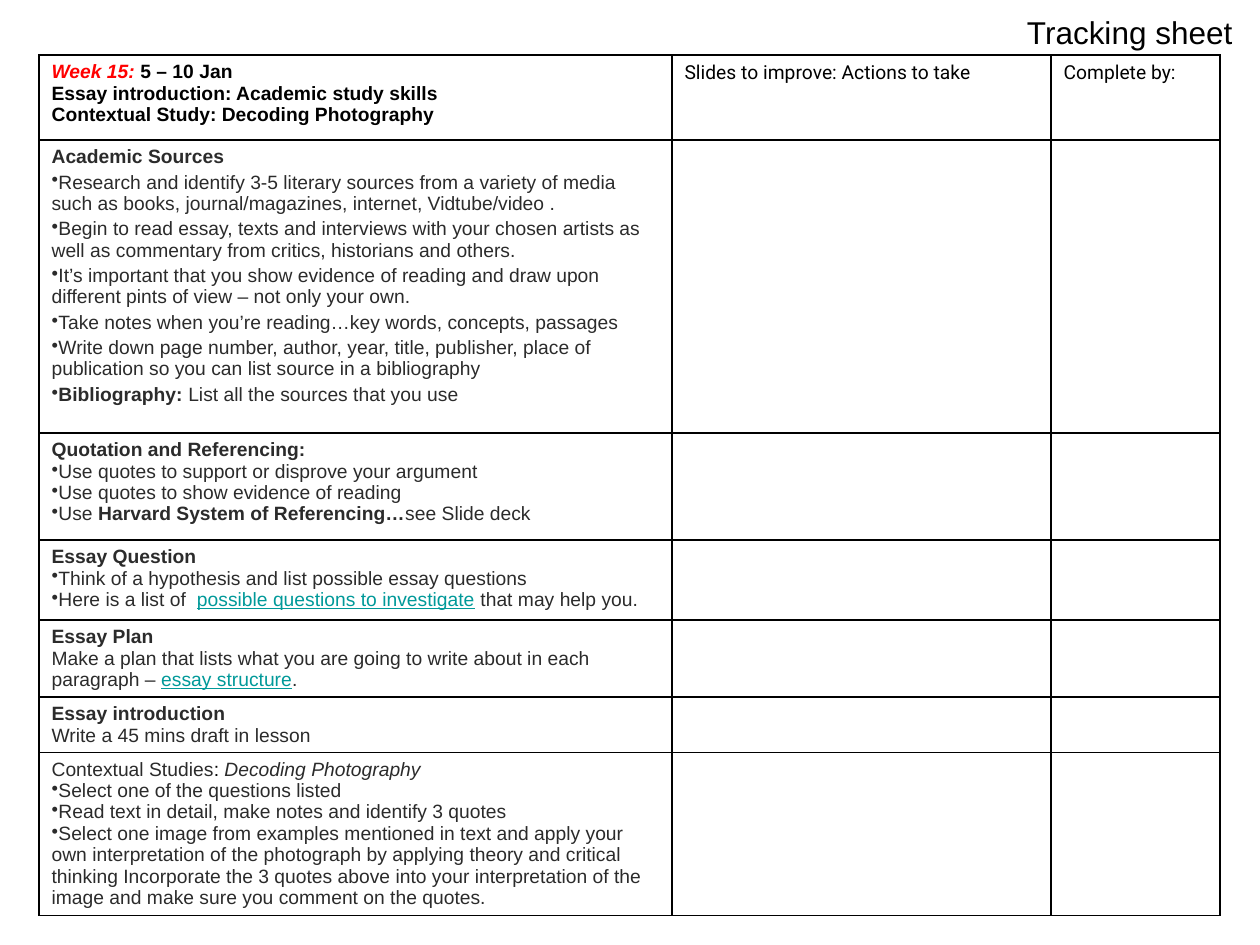
from lxml import etree
from pptx import Presentation
from pptx.dml import color
from pptx.enum import text
from pptx.oxml import ns
from pptx.util import Pt

EMU_PER_PX = 914400 / 126
BLACK, GREY, RED, TEAL = "000000", "2B2B2B", "FF0000", "009999"

COLUMNS = [633, 379, 169]
ROW_HEIGHTS = [85, 293, 107, 80, 77, 55, 163]

PLAIN, BOLD = {}, {"bold": True}
LINK = {"color": TEAL, "underline": True}
HEADING = {"color": BLACK, "bold": True}
LABEL = {"color": BLACK, "font": "Roboto"}


def px(value):
    return round(value * EMU_PER_PX)


def rgb(value):
    return color.RGBColor.from_string(value)


def line(*runs, bullet=False, before=0):
    return runs, bullet, before


def bullet(*runs, before=0):
    return line(*runs, bullet=True, before=before)


SPACED = 2.2
HEADER = [
    [line(("Week 15: ", {"color": RED, "bold": True, "italic": True}),
          ("5 – 10 Jan", HEADING)),
     line(("Essay introduction: Academic study skills", HEADING)),
     line(("Contextual Study: Decoding Photography", HEADING))],
    [line(("Slides to improve: Actions to take", LABEL))],
    [line(("Complete by:", LABEL))],
]
SOURCES = [
    "Research and identify 3-5 literary sources from a variety of media such as "
    "books, journal/magazines, internet, Vidtube/video .",
    "Begin to read essay, texts and interviews with your chosen artists as well as "
    "commentary from critics, historians and others.",
    "It’s important that you show evidence of reading and draw upon different pints "
    "of view – not only your own.",
    "Take notes when you’re reading…key words, concepts, passages",
    "Write down page number, author, year, title, publisher, place of publication "
    "so you can list source in a bibliography",
]
TASKS = [
    [line(("Academic Sources", BOLD), before=SPACED)]
    + [bullet((source, PLAIN), before=SPACED) for source in SOURCES]
    + [bullet(("Bibliography:", BOLD), (" List all the sources that you use", PLAIN),
              before=SPACED)],
    [line(("Quotation and Referencing:", BOLD)),
     bullet(("Use quotes to support or disprove your argument", PLAIN)),
     bullet(("Use quotes to show evidence of reading", PLAIN)),
     bullet(("Use ", PLAIN), ("Harvard System of Referencing…", BOLD),
            ("see Slide deck", PLAIN))],
    [line(("Essay Question", BOLD)),
     bullet(("Think of a hypothesis and list possible essay questions", PLAIN)),
     bullet(("Here is a list of  ", PLAIN), ("possible questions to investigate", LINK),
            (" that may help you.", PLAIN))],
    [line(("Essay Plan", BOLD)),
     line(("Make a plan that lists what you are going to write about in each "
           "paragraph – ", PLAIN), ("essay structure", LINK), (".", PLAIN))],
    [line(("Essay introduction", BOLD)),
     line(("Write a 45 mins draft in lesson", PLAIN))],
    [line(("Contextual Studies", PLAIN), (": ", {"color": BLACK}),
          ("Decoding Photography", {"italic": True})),
     bullet(("Select one of the questions listed", PLAIN)),
     bullet(("Read text in detail, make notes and identify 3 quotes", PLAIN)),
     bullet(("Select one image from examples mentioned in text and apply your own "
             "interpretation of the photograph by applying theory and critical thinking "
             "Incorporate the 3 quotes above into your interpretation of the image and "
             "make sure you comment on the quotes.", PLAIN))],
]


class SheetBuilder:
    def __init__(self, slide, font="Arial", size=11):
        self.slide = slide
        self.font = font
        self.size = size

    def run(self, paragraph, wording, style, size=None):
        run = paragraph.add_run()
        run.text = wording
        run.font.name = style.get("font", self.font)
        run.font.size = Pt(size or self.size)
        run.font.bold = style.get("bold", False)
        run.font.italic = style.get("italic", False)
        run.font.underline = style.get("underline", False)
        run.font.color.rgb = rgb(style.get("color", GREY))

    def title(self, wording, left, top, width, height):
        shape = self.slide.shapes.title
        shape.left, shape.top = px(left), px(top)
        shape.width, shape.height = px(width), px(height)
        frame = shape.text_frame
        frame.auto_size = text.MSO_AUTO_SIZE.NONE
        frame.vertical_anchor = text.MSO_ANCHOR.TOP
        frame.margin_top = 0
        paragraph = frame.paragraphs[0]
        paragraph.alignment = text.PP_ALIGN.RIGHT
        self.run(paragraph, wording, {"color": BLACK}, size=18)

    def lines(self, frame, content):
        for index, (runs, has_bullet, before) in enumerate(content):
            paragraph = frame.add_paragraph() if index else frame.paragraphs[0]
            paragraph.space_before = Pt(before)
            if has_bullet:
                properties = paragraph._p.get_or_add_pPr()
                properties.set("marL", "0")
                properties.set("indent", "0")
                etree.SubElement(properties, ns.qn("a:buChar"), char="•")
            for wording, style in runs:
                self.run(paragraph, wording, style)

    def borders(self, cell):
        properties = cell._tc.get_or_add_tcPr()
        for side in ("lnL", "lnR", "lnT", "lnB"):
            border = etree.SubElement(properties, ns.qn(f"a:{side}"), w=str(Pt(1)))
            fill = etree.SubElement(border, ns.qn("a:solidFill"))
            etree.SubElement(fill, ns.qn("a:srgbClr"), val=BLACK)

    def table(self, rows, left, top):
        table = self.slide.shapes.add_table(
            len(rows), len(COLUMNS), px(left), px(top),
            px(sum(COLUMNS)), px(sum(ROW_HEIGHTS))).table
        table.first_row = table.horz_banding = False
        for column, width in zip(table.columns, COLUMNS):
            column.width = px(width)
        for row, height in zip(table.rows, ROW_HEIGHTS):
            row.height = px(height)
        for row, contents in zip(table.rows, rows):
            for cell, content in zip(row.cells, contents):
                self.borders(cell)
                cell.fill.background()
                self.lines(cell.text_frame, content)


def main():
    presentation = Presentation()
    presentation.slide_width, presentation.slide_height = px(1260), px(945)
    slide = presentation.slides.add_slide(presentation.slide_layouts[5])
    sheet = SheetBuilder(slide)
    sheet.table([HEADER] + [[task, [], []] for task in TASKS], 39, 55)
    sheet.title("Tracking sheet", 111, 13, 1134, 78)
    presentation.save("out.pptx")


if __name__ == "__main__":
    main()
